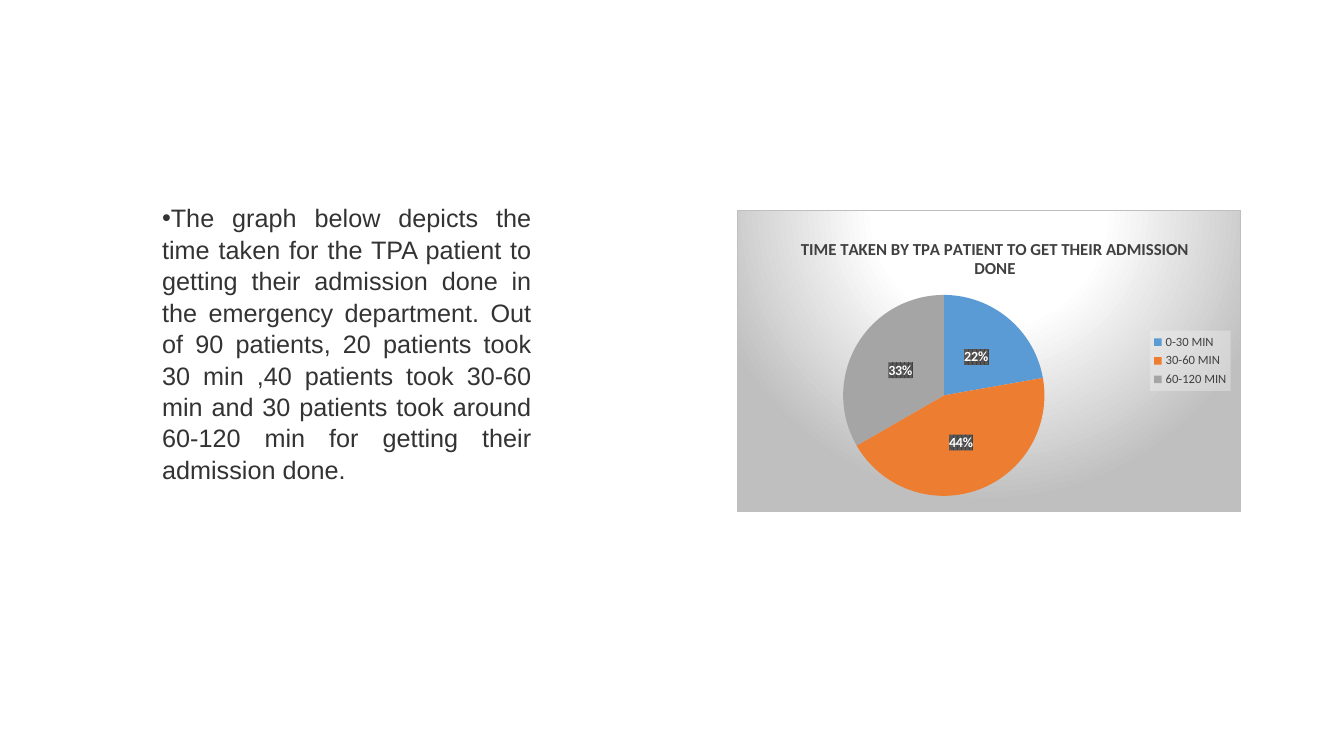
from lxml import etree
from pptx import Presentation
from pptx.chart.data import CategoryChartData as ChartData
from pptx.dml.color import RGBColor as RGB
from pptx.enum.chart import XL_CHART_TYPE as Kind, XL_LABEL_POSITION as Spot, XL_LEGEND_POSITION as Side
from pptx.enum.text import PP_ALIGN as Align
from pptx.oxml import parse_xml
from pptx.oxml.ns import nsdecls, qn
from pptx.util import Inches, Pt

STORY = ("The graph below depicts the time taken for the TPA patient to getting their "
         "admission done in the emergency department. Out of 90 patients, 20 patients took "
         "30 min ,40 patients took 30-60 min and 30 patients took around 60-120 min for "
         "getting their admission done.")
TITLE = "TIME TAKEN BY TPA PATIENT TO GET THEIR ADMISSION DONE"
TIMES = {"0-30 MIN": (22, "5B9BD5"), "30-60 MIN": (44, "ED7D31"), "60-120 MIN": (33, "A5A5A5")}

BACK = """<a:gradFill><a:gsLst>
<a:gs pos="0"><a:srgbClr val="FFFFFF"/></a:gs>
<a:gs pos="39000"><a:srgbClr val="FFFFFF"/></a:gs>
<a:gs pos="100000"><a:srgbClr val="BFBFBF"/></a:gs></a:gsLst>
<a:path path="circle"><a:fillToRect l="50000" t="-80000" r="50000" b="180000"/></a:path>
</a:gradFill><a:ln w="9525"><a:solidFill><a:srgbClr val="BFBFBF"/></a:solidFill></a:ln>"""
TAG = """<a:pattFill prst="pct75"><a:fgClr><a:srgbClr val="404040"/></a:fgClr>
<a:bgClr><a:srgbClr val="595959"/></a:bgClr></a:pattFill><a:ln><a:noFill/></a:ln>"""
VEIL = """<a:solidFill><a:srgbClr val="F2F2F2"><a:alpha val="39000"/></a:srgbClr></a:solidFill>"""


def color(code):
    return RGB.from_string(code)


def look(body):
    """Chart shape properties around the given fill and line."""
    return parse_xml(f'<c:spPr {nsdecls("c", "a")}>{body}</c:spPr>')


def place(part, before, inner=False, **spots):
    """Fix a chart part at fractions of the chart, ahead of the child named before."""
    old = part.find(qn("c:layout"))
    if old is not None:
        part.remove(old)
    layout = etree.Element(qn("c:layout"))
    manual = etree.SubElement(layout, qn("c:manualLayout"))
    if inner:
        etree.SubElement(manual, qn("c:layoutTarget")).set("val", "inner")
    for axis in "xy":
        etree.SubElement(manual, qn(f"c:{axis}Mode")).set("val", "edge")
    for key, val in spots.items():
        etree.SubElement(manual, qn(f"c:{key}")).set("val", str(val))
    part.find(qn(before)).addprevious(layout)


class Deck:
    def __init__(self):
        self.show = Presentation()
        self.show.slide_width, self.show.slide_height = Inches(13.33), Inches(7.5)
        self.slide = self.show.slides.add_slide(self.show.slide_layouts[6])
        self.sans, self.face, self.ink = "Arial", "Calibri", "404040"

    def style(self, font, size, name, code, bold=False):
        font.size, font.name, font.bold = Pt(size), name, bold
        font.color.rgb = color(code)

    def bullet(self, text, *spot):
        frame = self.slide.shapes.add_textbox(*map(Inches, spot)).text_frame
        frame.word_wrap = True
        para = frame.paragraphs[0]
        para.text = text
        para.alignment, para.line_spacing = Align.JUSTIFY, 1.04
        self.style(para.runs[0].font, 18, self.sans, "333333")
        props = para._p.get_or_add_pPr()
        etree.SubElement(props, qn("a:buFont")).set("typeface", self.sans)
        etree.SubElement(props, qn("a:buChar")).set("char", "•")

    def pie(self, title, parts, *spot):
        data = ChartData()
        data.categories = list(parts)
        data.add_series("Series 1", [val for val, _ in parts.values()])
        chart = self.slide.shapes.add_chart(Kind.PIE, *map(Inches, spot), data).chart
        self.style(chart.font, 10, self.face, "000000")
        root = chart._chartSpace.find(qn("c:chart"))
        root.addnext(look(BACK))

        chart.has_title = True
        head = chart.chart_title.text_frame
        head.text = title
        self.style(head.paragraphs[0].runs[0].font, 12, self.face, self.ink, True)
        chart.chart_title.include_in_layout = False
        place(root.find(qn("c:title")), "c:overlay", x=0.12, y=0.08)

        plot = chart.plots[0]
        plot.vary_by_categories = True
        place(root.find(qn("c:plotArea")), "c:pieChart", True, x=0.21, y=0.28, w=0.4, h=0.67)
        for i, (_, code) in enumerate(parts.values()):
            fill = plot.series[0].points[i].format.fill
            fill.solid()
            fill.fore_color.rgb = color(code)

        labels = plot.series[0].data_labels
        labels.show_percentage, labels.show_value = True, False
        labels.position = Spot.CENTER
        self.style(labels.font, 10, self.face, "FFFFFF", True)
        labels._element.find(qn("c:txPr")).addprevious(look(TAG))

        chart.has_legend = True
        legend = chart.legend
        legend.position, legend.include_in_layout = Side.RIGHT, False
        self.style(legend.font, 9, self.face, self.ink)
        key = root.find(qn("c:legend"))
        key.find(qn("c:txPr")).addprevious(look(VEIL))
        place(key, "c:overlay", x=0.82, y=0.4, w=0.16, h=0.2)


def main():
    deck = Deck()
    deck.bullet(STORY, 1.51, 1.95, 3.86, 3.13)
    deck.pie(TITLE, TIMES, 7.31, 2.08, 5, 3)
    deck.show.save("out.pptx")


if __name__ == "__main__":
    main()
